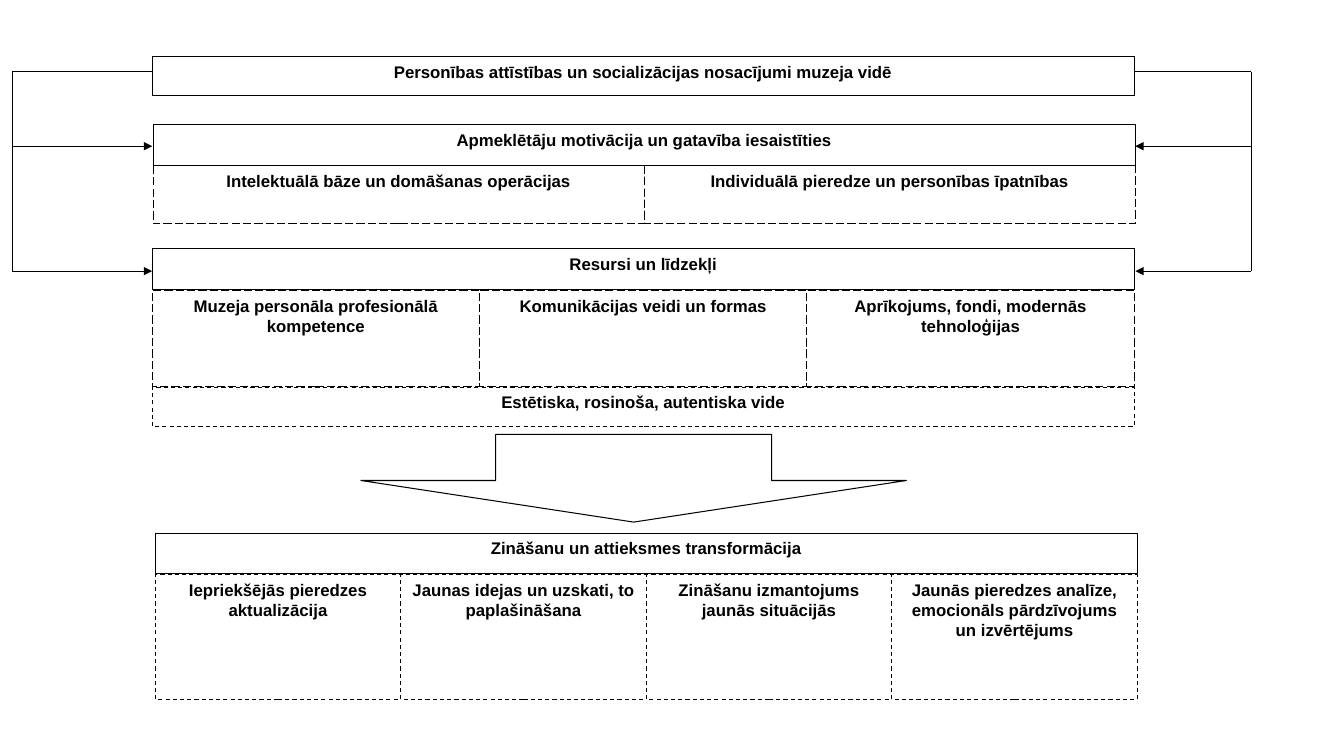
"""Build a slide with a flow diagram of personality development in a museum setting."""
from lxml.etree import SubElement
from pptx import Presentation
from pptx.dml.color import RGBColor
from pptx.enum.dml import MSO_LINE as Dash
from pptx.enum.shapes import MSO_CONNECTOR as Connector, MSO_SHAPE as Shape
from pptx.enum.text import MSO_ANCHOR as Anchor, PP_ALIGN as Align
from pptx.oxml.ns import qn
from pptx.util import Inches, Pt

SLIDE_WIDTH, SLIDE_HEIGHT = 13.33, 7.5
BAND_WIDTH = 9.74
INK, PAPER = "000000", "FFFFFF"

# left, top, height, border, cells
BANDS = [
    (1.54, 5.7, 1.24, Dash.DASH, [
        "Iepriekšējās pieredzes aktualizācija",
        "Jaunas idejas un uzskati, to paplašināšana",
        "Zināšanu izmantojums jaunās situācijās",
        "Jaunās pieredzes analīze, emocionāls pārdzīvojums un izvērtējums"]),
    (1.54, 5.29, 0.4, Dash.SOLID, ["Zināšanu un attieksmes transformācija"]),
    (1.52, 1.64, 0.58, Dash.LONG_DASH, [
        "Intelektuālā bāze un domāšanas operācijas",
        "Individuālā pieredze un personības īpatnības"]),
    (1.51, 0.56, 0.39, Dash.SOLID, [
        "Personības attīstības un socializācijas nosacījumi muzeja vidē"]),
    (1.52, 1.24, 0.4, Dash.SOLID, ["Apmeklētāju motivācija un gatavība iesaistīties"]),
    (1.51, 2.88, 0.96, Dash.LONG_DASH, [
        "Muzeja personāla profesionālā kompetence",
        "Komunikācijas veidi un formas",
        "Aprīkojums, fondi, modernās tehnoloģijas"]),
    (1.51, 3.84, 0.39, Dash.DASH, ["Estētiska, rosinoša, autentiska vide"]),
    (1.51, 2.47, 0.4, Dash.SOLID, ["Resursi un līdzekļi"]),
]
# outer rail, edge of the bands
BRACKETS = [(0.12, 1.51), (12.41, 11.26)]
START, *TARGETS = 0.71, 1.45, 2.69
DOWN_ARROW = (3.58, 4.31, 5.41, 0.87)
DOWN_ARROW_SHAPE = (0.506, 0.474)


def colour(value):
    return RGBColor.from_string(value)


def style_line(line, dash=Dash.SOLID):
    line.color.rgb = colour(INK)
    line.width = Pt(0.75)
    line.dash_style = dash


def add_block(slide, kind, box, dash=Dash.SOLID):
    block = slide.shapes.add_shape(kind, *map(Inches, box))
    block.shadow.inherit = False
    block.fill.solid()
    block.fill.fore_color.rgb = colour(PAPER)
    style_line(block.line, dash)
    return block


def add_cell(slide, box, dash, wording):
    frame = add_block(slide, Shape.RECTANGLE, box, dash).text_frame
    frame.word_wrap = True
    frame.vertical_anchor = Anchor.TOP
    frame.text = wording
    paragraph = frame.paragraphs[0]
    paragraph.alignment = Align.CENTER
    font = paragraph.font
    font.name, font.size, font.bold = "Arial", Pt(12), True
    font.color.rgb = colour(INK)


def add_line(slide, start, end, arrow=False):
    link = slide.shapes.add_connector(Connector.STRAIGHT, *map(Inches, start + end))
    style_line(link.line)
    if arrow:
        SubElement(link.line._get_or_add_ln(), qn("a:tailEnd"), type="triangle")
    SubElement(link._element.spPr, qn("a:effectLst"))


def add_bracket(slide, rail, edge):
    add_line(slide, (rail, START), (rail, TARGETS[-1]))
    add_line(slide, (edge, START), (rail, START))
    for target in TARGETS:
        add_line(slide, (rail, target), (edge, target), arrow=True)


def main():
    deck = Presentation()
    deck.slide_width, deck.slide_height = Inches(SLIDE_WIDTH), Inches(SLIDE_HEIGHT)
    slide = deck.slides.add_slide(deck.slide_layouts[6])
    for left, top, height, dash, cells in BANDS:
        width = BAND_WIDTH / len(cells)
        for column, wording in enumerate(cells):
            add_cell(slide, (left + column * width, top, width, height), dash, wording)
    for rail, edge in BRACKETS:
        add_bracket(slide, rail, edge)
    arrow = add_block(slide, Shape.DOWN_ARROW, DOWN_ARROW)
    for index, share in enumerate(DOWN_ARROW_SHAPE):
        arrow.adjustments[index] = share
    deck.save("out.pptx")


if __name__ == "__main__":
    main()
